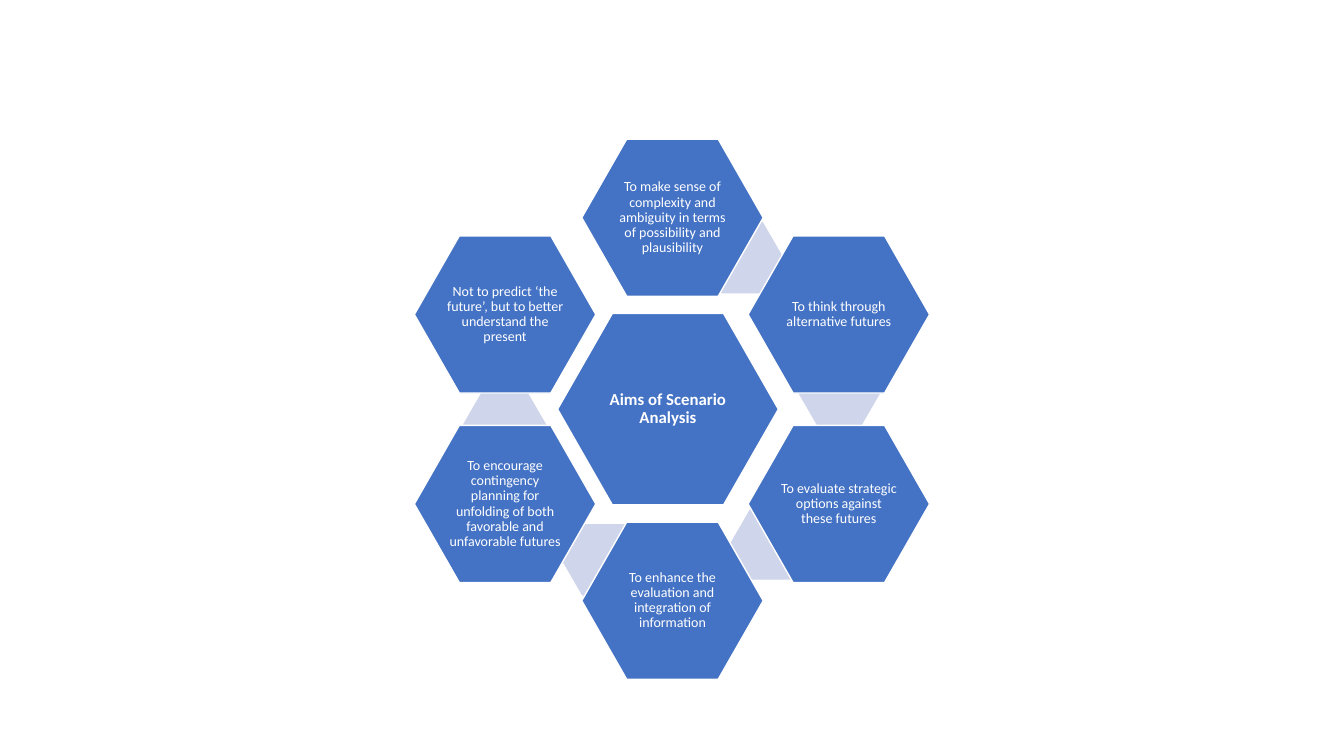
from dataclasses import dataclass

from pptx import Presentation
from pptx import util as u
from pptx.dml.color import RGBColor
from pptx.enum import shapes, text
from pptx.slide import Slide

PX = 9144  # EMU per px, 100 px to the inch

BLUE = RGBColor(0x44, 0x72, 0xC4)
PALE_BLUE = RGBColor(0xCF, 0xD5, 0xEA)
WHITE = RGBColor(0xFF, 0xFF, 0xFF)

FONT = "Calibri"
LEFT, MIDDLE, RIGHT = 411, 577, 742
AIM_SIZE = (180, 156)
LINK_SIZE = (83, 71)
CENTRE_SIZE = (219, 190)


@dataclass(frozen=True)
class Aim:
    wording: str
    position: tuple[int, int]
    link: tuple[int, int] | None = None


# Clockwise from the top
AIMS = [
    Aim("To make sense of complexity and ambiguity in terms of possibility and plausibility",
        (MIDDLE, 138), (694, 220)),
    Aim("To think through alternative futures", (RIGHT, 234), (791, 353)),
    Aim("To evaluate strategic options against these futures", (RIGHT, 422), (724, 504)),
    Aim("To enhance the evaluation and integration of information", (MIDDLE, 518), (557, 520)),
    Aim("To encourage contingency planning for unfolding of both favorable and unfavorable futures",
        (LEFT, 422), (459, 386)),
    Aim("Not to predict ‘the future’, but to better understand the present", (LEFT, 234)),
]


def add_hexagon(slide: Slide, position: tuple[int, int], size: tuple[int, int],
                fill: RGBColor, corner: float):
    bounds = [length * PX for length in position + size]
    hexagon = slide.shapes.add_shape(shapes.MSO_SHAPE.HEXAGON, *bounds)
    hexagon.adjustments[0] = corner
    hexagon.shadow.inherit = False
    hexagon.fill.solid()
    hexagon.fill.fore_color.rgb = fill
    hexagon.line.fill.background()
    return hexagon


def add_link(slide: Slide, position: tuple[int, int]) -> None:
    add_hexagon(slide, position, LINK_SIZE, PALE_BLUE, 0.289)


def add_label_hexagon(slide: Slide, wording: str, position: tuple[int, int],
                      size: tuple[int, int], points: int, inset: int,
                      bold: bool = False) -> None:
    hexagon = add_hexagon(slide, position, size, BLUE, 0.286)
    hexagon.line.color.rgb = WHITE
    hexagon.line.width = u.Pt(1)

    frame = hexagon.text_frame
    frame.text = wording
    frame.word_wrap = True
    frame.vertical_anchor = text.MSO_ANCHOR.MIDDLE
    frame.margin_left = frame.margin_right = inset * PX
    frame.margin_top = frame.margin_bottom = inset * PX

    label = frame.paragraphs[0]
    label.alignment = text.PP_ALIGN.CENTER
    label.line_spacing = 0.9
    font = label.runs[0].font
    font.name = FONT
    font.size = u.Pt(points)
    font.bold = bold
    font.color.rgb = WHITE


def main() -> None:
    deck = Presentation()
    deck.slide_width = 1333 * PX
    deck.slide_height = 750 * PX
    slide = deck.slides.add_slide(deck.slide_layouts.get_by_name("Blank"))

    # Central topic
    add_label_hexagon(slide, "Aims of Scenario Analysis", (553, 311), CENTRE_SIZE,
                      points=12, inset=2, bold=True)

    # Ring of aims, each above the link that leads on from it
    for aim in AIMS:
        if aim.link:
            add_link(slide, aim.link)
        add_label_hexagon(slide, aim.wording, aim.position, AIM_SIZE, points=10, inset=1)

    deck.save("out.pptx")


if __name__ == "__main__":
    main()
